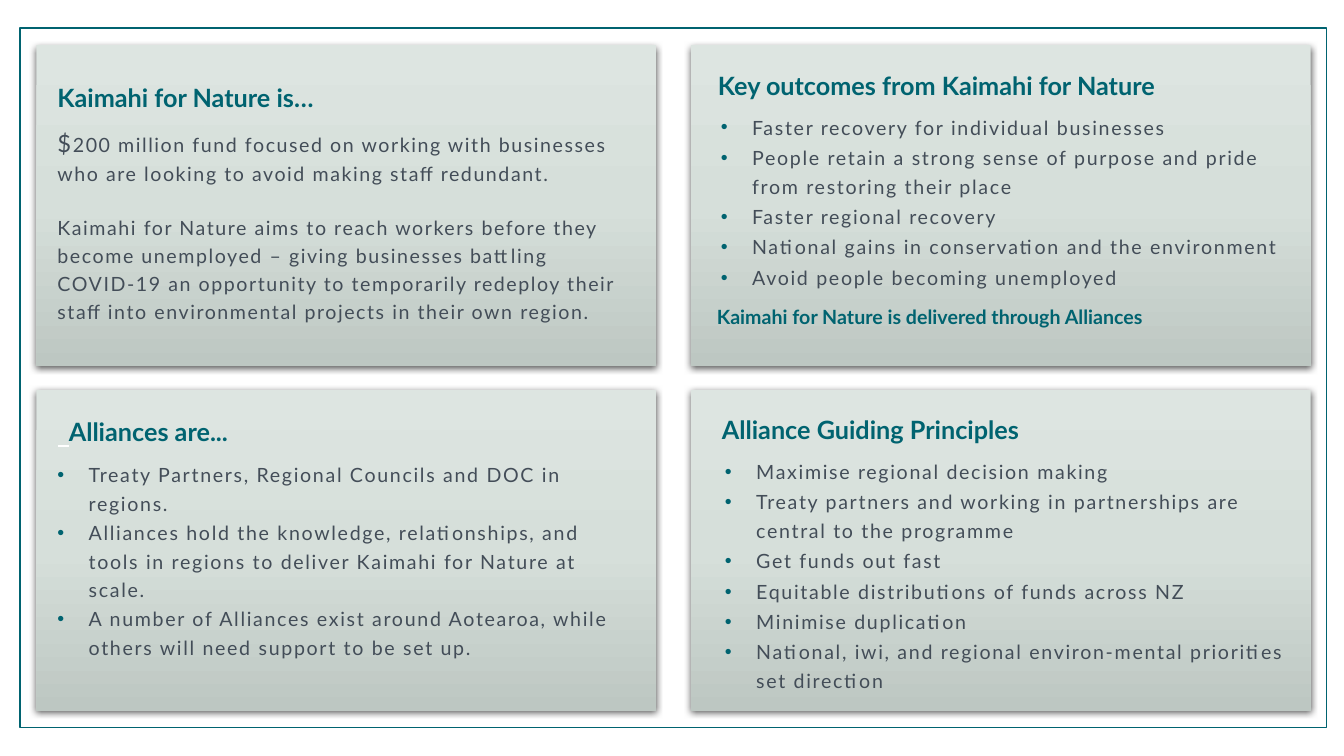
from copy import deepcopy

from lxml import etree
from pptx import Presentation
from pptx.dml.color import RGBColor
from pptx.enum.shapes import MSO_SHAPE
from pptx.enum.text import MSO_ANCHOR, MSO_AUTO_SIZE, PP_ALIGN
from pptx.oxml.ns import qn
from pptx.util import Inches, Pt

RECT = MSO_SHAPE.RECTANGLE
TOP, BOTTOM = MSO_ANCHOR.TOP, MSO_ANCHOR.BOTTOM
GROW = MSO_AUTO_SIZE.SHAPE_TO_FIT_TEXT
LEFT = PP_ALIGN.LEFT
TEAL, GREY, WHITE = "006370", "434D58", "FFFFFF"
FADE = [(0, "DDE5E1"), (0.5, "D6DFDA"), (1, "BDC7C2")]
CARD_W, CARD_H = 6.15, 3.18
COLS, ROWS = (0.36, 6.85), (0.45, 3.87)


def paint(text):
    """Turn a hex string into a colour."""
    return RGBColor.from_string(text)


def add_run(para, text, size=14, color=GREY, bold=False, gap=0.0, font="Lato"):
    """Add one run with its font and letter gap."""
    run = para.add_run()
    run.text = text
    run.font.size, run.font.bold, run.font.name = Pt(size), bold, font
    run.font.color.rgb = paint(color)
    run._r.get_or_add_rPr().set("spc", str(round(gap * 100)))
    return run


def add_para(frame, before=0.0, after=0, lines=1.0, margin=0.01, hang=0.0):
    """Add a paragraph, with a bullet when it hangs."""
    first = frame.paragraphs[0]
    para = frame.add_paragraph() if first.runs else first
    props = para._p.get_or_add_pPr()
    props.set("marL", str(Inches(margin)))
    props.set("indent", str(-Inches(hang)))
    if hang:
        tint = etree.SubElement(props, qn("a:buClr"))
        etree.SubElement(tint, qn("a:srgbClr"), val=TEAL)
        etree.SubElement(props, qn("a:buFont"), typeface="Arial")
        etree.SubElement(props, qn("a:buChar"), char="•")
    else:
        etree.SubElement(props, qn("a:buNone"))
    para.alignment, para.line_spacing = LEFT, lines
    para.space_before, para.space_after = Pt(before), Pt(after)
    return para


def add_head(frame, text):
    """Add the heading of a card."""
    para = add_para(frame, after=6)
    add_run(para, text, 18, TEAL, True)


def add_list(frame, items, margin=0.35, before=1.2):
    """Add a list with teal bullets."""
    for item in items:
        para = add_para(frame, before, lines=1.22, margin=margin, hang=0.31)
        add_run(para, item, gap=1.2)


def add_frame(slide, box):
    """Draw the thin teal frame round the cards."""
    shape = slide.shapes.add_shape(RECT, *map(Inches, box))
    shape.shadow.inherit = False
    shape.fill.solid()
    shape.fill.fore_color.rgb = paint(WHITE)
    shape.line.color.rgb = paint(TEAL)
    shape.line.width = Pt(1)


def add_card(slide, box):
    """Draw a shaded card with a soft shadow."""
    shape = slide.shapes.add_shape(RECT, *map(Inches, box))
    shape.line.fill.background()
    shape.fill.gradient()
    shape.fill.gradient_angle = 270
    props = shape._element.spPr
    stops = props.find(".//" + qn("a:gsLst"))
    stops.insert(1, deepcopy(stops[0]))
    for stop, (place, color) in zip(shape.fill.gradient_stops, FADE):
        stop.position = place
        stop.color.rgb = paint(color)
    shape.shadow.inherit = False
    glow = etree.SubElement(
        props.find(qn("a:effectLst")), qn("a:outerShdw"), blurRad=str(Pt(4.5)),
        dist=str(Pt(1.5)), dir="5400000", algn="ctr", rotWithShape="0")
    shade = etree.SubElement(glow, qn("a:srgbClr"), val="000000")
    etree.SubElement(shade, qn("a:alpha"), val="63000")


def set_body(slide, key, card, inner, anchor=TOP, pads=(0, 0.01, 0, 0)):
    """Place a body inside its card and return its text frame."""
    body = slide.placeholders[key]
    slide.shapes._spTree.append(body._element)
    x, y, width, height = inner
    body.left, body.top = Inches(card[0] + x), Inches(card[1] + y)
    body.width, body.height = Inches(width), Inches(height)
    frame = body.text_frame
    frame.word_wrap, frame.auto_size = True, GROW
    frame.vertical_anchor = anchor
    frame.margin_left, frame.margin_top, frame.margin_right, frame.margin_bottom = map(Inches, pads)
    return frame


def add_about(slide, card):
    """Fill the card that tells what the fund is."""
    frame = set_body(slide, 1, card, (0.2, 0.36, 5.79, 2.4))
    add_head(frame, "Kaimahi for Nature is…")
    para = add_para(frame, 0.9, lines=1.2)
    add_run(para, "$", 17, gap=1.1)
    add_run(para, "200 million fund focused on working with businesses who are "
            "looking to avoid making staﬀ redundant.", gap=1.1)
    para = add_para(frame, 18.5, 6, 1.2)
    add_run(para, "Kaimahi for Nature aims to reach workers before they become "
            "unemployed – giving businesses battling COVID-19 an opportunity to "
            "temporarily redeploy their staﬀ into environmental projects in "
            "their own region.", gap=1.1)


def add_gains(slide, card):
    """Fill the card of key outcomes."""
    frame = set_body(slide, 2, card, (0.26, 0.26, 5.61, 2.55), BOTTOM)
    add_head(frame, "Key outcomes from Kaimahi for Nature")
    add_list(frame, [
        "Faster recovery for individual businesses",
        "People retain a strong sense of purpose and pride from restoring their place",
        "Faster regional recovery",
        "National gains in conservation and the environment",
        "Avoid people becoming unemployed"])
    para = add_para(frame, 3, lines=1.5, margin=0)
    add_run(para, "Kaimahi for Nature is delivered through Alliances", 14, TEAL, True)


def add_allies(slide, card):
    """Fill the card that tells what alliances are."""
    frame = set_body(slide, 3, card, (0.21, 0.08, 5.67, 2.6), pads=(0, 0.02, 0, 0))
    para = add_para(frame, after=6)
    mark = add_run(para, " ", 29.5, WHITE, gap=-7.4, font="Times New Roman")
    mark.font.underline = True
    add_run(para, "Alliances are...", 18, TEAL, True)
    add_list(frame, [
        "Treaty Partners, Regional Councils and DOC in regions.",
        "Alliances hold the knowledge, relationships, and tools in regions to "
        "deliver Kaimahi for Nature at scale.",
        "A number of Alliances exist around Aotearoa, while others will need "
        "support to be set up."], 0.31, 0)


def add_rules(slide, card):
    """Fill the card of guiding principles."""
    frame = set_body(slide, 4, card, (0.2, 0.19, 5.88, 3.16), pads=(0.1, 0.05, 0.1, 0.05))
    add_head(frame, "Alliance Guiding Principles")
    add_list(frame, [
        "Maximise regional decision making",
        "Treaty partners and working in partnerships are central to the programme",
        "Get funds out fast",
        "Equitable distributions of funds across NZ",
        "Minimise duplication",
        "National, iwi, and regional environ-mental priorities set direction"])


def main():
    """Build the slide and save it."""
    deck = Presentation()
    deck.slide_width, deck.slide_height = Inches(13.33), Inches(7.5)
    slide = deck.slides.add_slide(deck.slide_layouts[4])
    title = slide.shapes.title._element
    title.getparent().remove(title)
    add_frame(slide, (0.2, 0.28, 12.96, 6.94))
    cards = [(x, y, CARD_W, CARD_H) for y in ROWS for x in COLS]
    for card, fill in zip(cards, (add_about, add_gains, add_allies, add_rules)):
        add_card(slide, card)
        fill(slide, card)
    deck.save("out.pptx")


if __name__ == "__main__":
    main()
